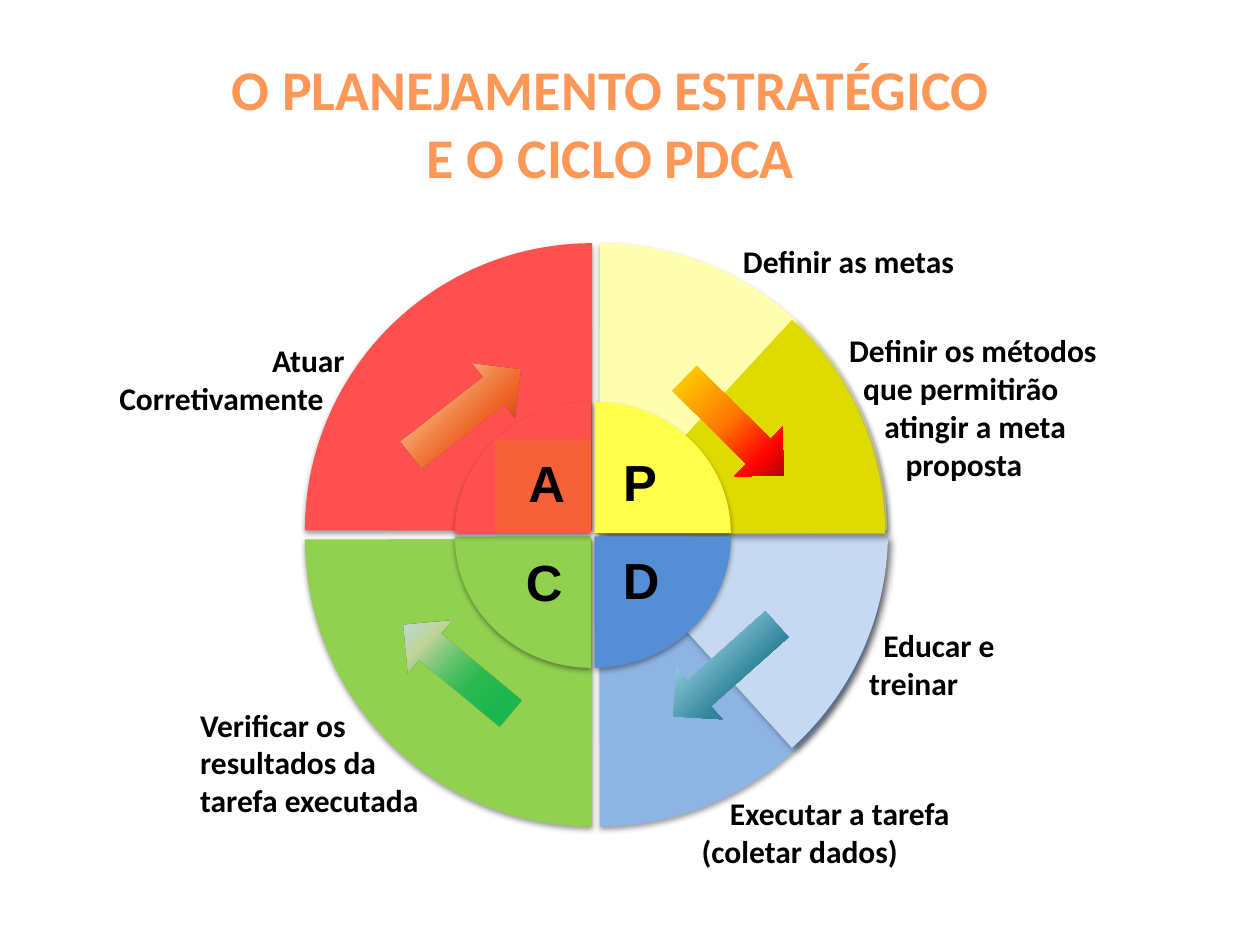
from lxml.etree import SubElement
from pptx import Presentation
from pptx.dml.color import RGBColor
from pptx.enum.shapes import MSO_SHAPE
from pptx.enum.text import MSO_ANCHOR, PP_ALIGN
from pptx.oxml.ns import qn
from pptx.util import Inches, Pt

BLACK = RGBColor(0x00, 0x00, 0x00)
ORANGE = RGBColor(0xFF, 0x98, 0x56)
RED = RGBColor(0xFF, 0x50, 0x50)
RED_CORE = RGBColor(0xF6, 0x61, 0x38)
PALE_YELLOW = RGBColor(0xFF, 0xFF, 0xAF)
YELLOW = RGBColor(0xFF, 0xFF, 0x4B)
OLIVE = RGBColor(0xDF, 0xDA, 0x00)
GREEN = RGBColor(0x92, 0xD0, 0x50)
LIGHT_BLUE = RGBColor(0x8E, 0xB4, 0xE3)
BLUE = RGBColor(0x55, 0x8E, 0xD5)
PALE_BLUE = RGBColor(0xC6, 0xD9, 0xF1)

COLUMNS, ROWS = 100, 75
WEDGE_SHADOW = (38, 3.15, 1.57, 90)
PIE_SHADOW = (40, 4, 3, 45)
SPACE = 0.56  # columns per word space at 18 pt


def child(parent, tag, **attributes):
    return SubElement(parent, qn(tag), {k: str(v) for k, v in attributes.items()})


class Canvas:
    def __init__(self, prs):
        self.s = prs.slides.add_slide(prs.slide_layouts[5])
        self.column = prs.slide_width / COLUMNS
        self.row = prs.slide_height / ROWS

    def box(self, x, y, w, h):
        return (round(x * self.column), round(y * self.row),
                round(w * self.column), round(h * self.row))

    def shape(self, kind, at, color=None, rotation=0, shadow=None):
        sp = self.s.shapes.add_shape(kind, *self.box(*at))
        sp.rotation = rotation
        sp.line.fill.background()
        if color is not None:
            sp.fill.solid()
            sp.fill.fore_color.rgb = color
        sp.shadow.inherit = False
        if shadow:
            alpha, blur, distance, angle = shadow
            effects = sp._element.spPr.find(qn("a:effectLst"))
            outer = child(effects, "a:outerShdw", blurRad=Pt(blur), dist=Pt(distance),
                          dir=angle * 60000, algn="ctr", rotWithShape=0)
            black = child(outer, "a:srgbClr", val=BLACK)
            child(black, "a:alpha", val=alpha * 1000)
        return sp

    def wedge(self, x, y, w, h, rotation, color, core, core_color):
        """Quarter disc covering the given area, with a block at its inner corner."""
        fw, fh = (h, w) if rotation % 180 else (w, h)
        frame = (x + (w - fw) / 2, y + (h - fh) / 2, fw, fh)
        self.shape(MSO_SHAPE.PIE_WEDGE, frame, color, rotation, WEDGE_SHADOW)
        if core:
            cw, ch = core
            left = x + w - cw if rotation in (0, 270) else x
            top = y + h - ch if rotation in (0, 90) else y
            self.shape(MSO_SHAPE.RECTANGLE, (left, top, cw, ch), core_color)

    def sector(self, x, y, rotation, color):
        sp = self.shape(MSO_SHAPE.PIE, (x, y, 46.2, 46.1), color, rotation, PIE_SHADOW)
        sp.adjustments[0], sp.adjustments[1] = 133.61, 162

    def arrow(self, x, y, rotation, stops, radial=True):
        sp = self.shape(MSO_SHAPE.DOWN_ARROW, (x, y, 5.5, 11), rotation=rotation)
        sp.fill.gradient()
        grad = sp._element.spPr.find(qn("a:gradFill"))
        for old in list(grad):
            grad.remove(old)
        grad.set("rotWithShape", "0" if radial else "1")
        stop_list = child(grad, "a:gsLst")
        for position, color, alpha in stops:
            stop = child(stop_list, "a:gs", pos=position * 1000)
            clr = child(stop, "a:srgbClr", val=color)
            if alpha < 100:
                child(clr, "a:alpha", val=alpha * 1000)
        if radial:
            route = child(grad, "a:path", path="circle")
            child(route, "a:fillToRect", l=100000, t=100000)
        else:
            child(grad, "a:lin", ang=90 * 60000, scaled=0)

    def set_lines(self, tf, lines, size, font, color, align, spacing=None):
        """Fill a frame with (text, indent in columns) lines."""
        tf.word_wrap = True
        tf.margin_left = Inches(0.1) if align == PP_ALIGN.LEFT else 0
        tf.margin_right = Inches(0.1) if align == PP_ALIGN.RIGHT else 0
        for i, (text, indent) in enumerate(lines):
            p = tf.add_paragraph() if i else tf.paragraphs[0]
            p.text, p.alignment = text, align
            if indent:
                side = "marL" if align == PP_ALIGN.LEFT else "marR"
                p._p.get_or_add_pPr().set(side, str(round(indent * self.column)))
            p.space_before = Pt(0)
            if spacing:
                p.line_spacing = spacing
            p.font.size, p.font.name, p.font.bold = Pt(size), font, True
            p.font.color.rgb = color

    def title(self, at, lines):
        sp = self.s.shapes.title
        sp.left, sp.top, sp.width, sp.height = self.box(*at)
        sp.text_frame.vertical_anchor = MSO_ANCHOR.MIDDLE
        self.set_lines(sp.text_frame, lines, 32, "Calibri", ORANGE, PP_ALIGN.CENTER)

    def label(self, at, *lines, align=PP_ALIGN.LEFT):
        tf = self.s.shapes.add_textbox(*self.box(*at)).text_frame
        self.set_lines(tf, lines, 18, "Calibri", BLACK, align)

    def letter(self, x, y, text):
        tf = self.s.shapes.add_textbox(*self.box(x, y, 5, 5.4)).text_frame
        self.set_lines(tf, [(text, 0)], 29, "Arial", BLACK, PP_ALIGN.CENTER, 0.9)


def main():
    prs = Presentation()
    prs.slide_width, prs.slide_height = Inches(10), Inches(7.5)
    c = Canvas(prs)
    c.title((17.1, 3.8, 63.7, 11.8),
            [("O PLANEJAMENTO ESTRATÉGICO", 1), ("E O CICLO PDCA", 0)])

    # letter, column, row, rotation, outer, inner and core colours, letter place
    quadrants = [
        ("P", 1, 0, 90, PALE_YELLOW, YELLOW, None, (48.3, 35.8)),
        ("D", 1, 1, 180, LIGHT_BLUE, BLUE, BLUE, (48.4, 43.6)),
        ("C", 0, 1, 270, GREEN, GREEN, GREEN, (40.7, 43.8)),
        ("A", 0, 0, 0, RED, RED, RED_CORE, (40.9, 35.9)),
    ]
    for _, col, row, turn, outer, *_ in quadrants:
        c.wedge(24.2 + 23.4 * col, 19.3 + 23.5 * row, 22.8, 22.8, turn,
                outer, (16.1, 16.1), outer)
    c.sector(24.3, 19.2, 137.9, PALE_BLUE)
    c.sector(24.1, 19.3, 90, OLIVE)
    for name, col, row, turn, _, inner, core, place in quadrants:
        c.wedge(36.1 + 11.1 * col, 31.9 + 10.7 * row, 10.8, 10.4, turn,
                inner, core and (7.6, 7.4), core)
        c.letter(*place, name)

    c.arrow(33.5, 47.6, 129.8, [(22, "00B050", 81), (40, "00B050", 69), (70, "C3D69B", 100),
                                (88, "B7DEE8", 100), (100, "DBEEF4", 100)])
    c.arrow(34.2, 27.2, 232.1, [(27, "984807", 83), (40, "E46C0A", 62), (70, "FAC090", 100),
                                (88, "FAC090", 100), (100, "F79646", 100)])
    c.arrow(55.5, 28.4, 314.7, [(0, "FFF200", 100), (45, "FF7A00", 100),
                                (70, "FF0300", 100), (100, "4D0808", 100)], radial=False)
    c.arrow(54.8, 47.7, 48.3, [(0, "215968", 100), (40, "31859C", 100), (70, "93CDDD", 100),
                               (88, "B7DEE8", 100), (100, "DBEEF4", 100)])

    c.label((57.8, 18.7, 18.9, 4), ("Definir as metas", 0), align=PP_ALIGN.RIGHT)
    c.label((66.4, 25.8, 21.8, 13.1), ("Definir os métodos", 0),
            ("que permitirão", 2 * SPACE), ("atingir a meta", 5 * SPACE),
            ("proposta", 8 * SPACE))
    c.label((68, 49.2, 12.1, 7.1), ("Educar e", 2 * SPACE), ("treinar", 0))
    c.label((54.7, 62.5, 21.9, 7.1), ("Executar a tarefa", 4 * SPACE), ("(coletar dados)", 0))
    c.label((14.9, 55.5, 19.5, 10.1), ("Verificar os", 0), ("resultados da", 0),
            ("tarefa executada", 0))
    c.label((8.2, 26.6, 20.7, 7.1), ("Atuar", SPACE), ("Corretivamente", 4 * SPACE),
            align=PP_ALIGN.RIGHT)
    prs.save("out.pptx")


if __name__ == "__main__":
    main()
